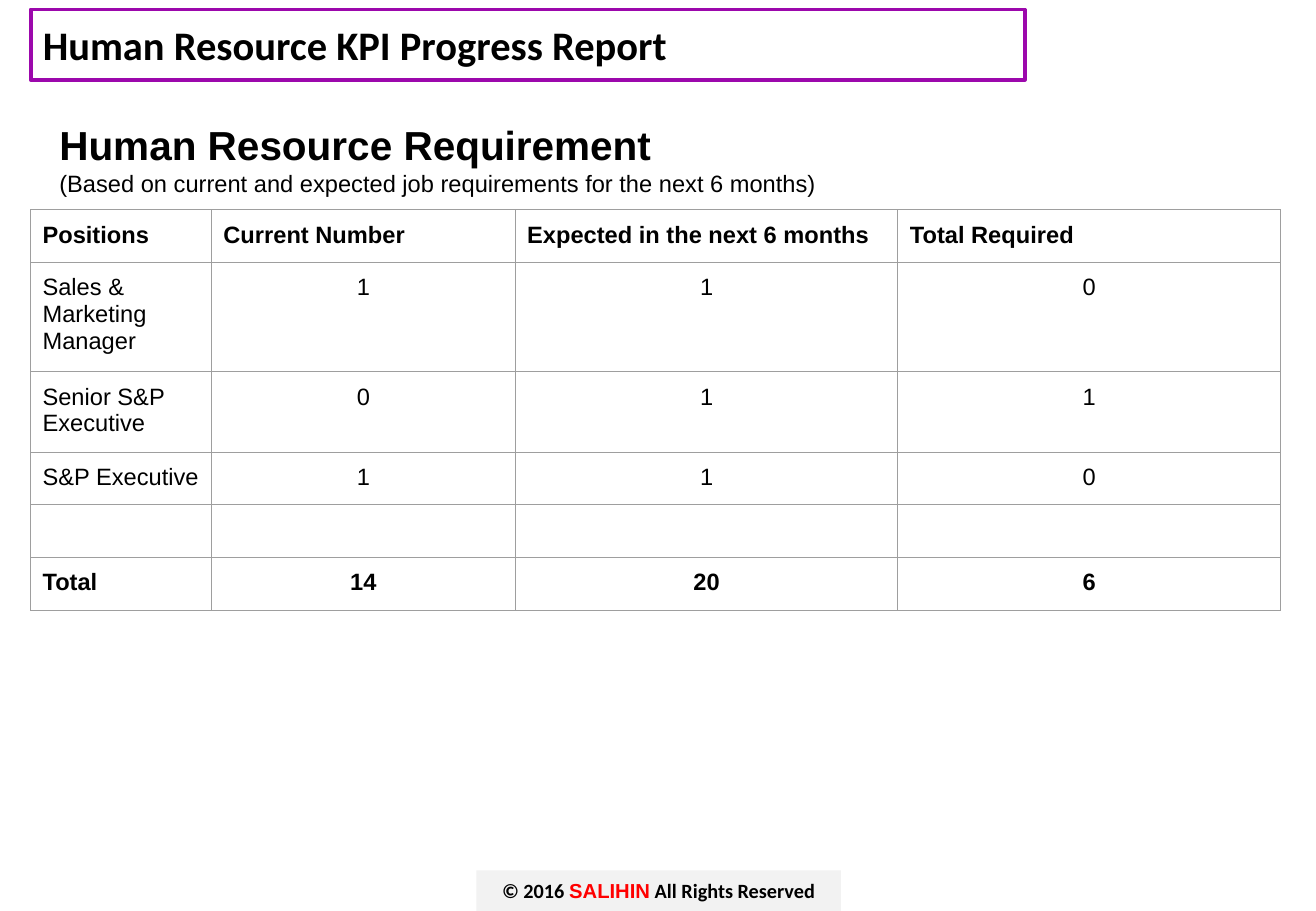
from lxml.etree import SubElement as Sub
from pptx import Presentation
from pptx.dml.color import RGBColor as Rgb
from pptx.enum.shapes import MSO_SHAPE as Shape
from pptx.enum.text import MSO_ANCHOR as Anchor, MSO_AUTO_SIZE as Auto, PP_ALIGN as Align
from pptx.oxml.ns import qn
from pptx.util import Cm, Pt

# Content
TITLE = "Human Resource KPI Progress Report"
HEADS = [
    ("Human Resource Requirement", 24, True),
    ("(Based on current and expected job requirements for the next 6 months)", 14, False),
]
ROWS = [
    ("Positions", "Current Number", "Expected in the next 6 months", "Total Required"),
    ("Sales & Marketing Manager", "1", "1", "0"),
    ("Senior S&P Executive", "0", "1", "1"),
    ("S&P Executive", "1", "1", "0"),
    ("", "", "", ""),
    ("Total", "14", "20", "6"),
]
FOOT = [
    ("© 2016 ", "Calibri", "text"),
    ("SALIHIN", "Arial", "red"),
    (" All Rights Reserved", "Calibri", "text"),
]
COLORS = {"text": "000000", "red": "FF0000", "frame": "9C08AC",
          "grid": "9E9E9E", "foot": "F2F2F2"}
WIDTHS = [3.78, 6.35, 8, 8]
HEIGHTS = [1.1, 2.18, 1.65, 1.1, 1.1, 1.1]
LEFT, PAD = 0.64, Cm(0.25)


def tint(name):
    return Rgb.from_string(COLORS[name])


def style(font, size, bold, face="Arial", color="text"):
    font.name, font.size, font.bold = face, Pt(size), bold
    font.color.rgb = tint(color)


def pad(part):
    part.margin_left = part.margin_right = PAD
    part.margin_top = part.margin_bottom = PAD


def edge(cell):
    props = cell._tc.get_or_add_tcPr()
    for side in ("lnL", "lnR", "lnT", "lnB"):
        line = Sub(props, qn("a:" + side), w=str(Pt(0.75)))
        fill = Sub(line, qn("a:solidFill"))
        Sub(fill, qn("a:srgbClr"), val=COLORS["grid"])


deck = Presentation()
deck.slide_width, deck.slide_height = Cm(27.51), Cm(19.05)
slide = deck.slides.add_slide(deck.slide_layouts[5])
shapes = slide.shapes

# Title
title = shapes.title
title.left, title.top, title.width, title.height = Cm(LEFT), Cm(0.2), Cm(20.78), Cm(1.47)
title.line.color.rgb = tint("frame")
title.line.width = Pt(2.25)
frame = title.text_frame
frame.text = TITLE
frame.auto_size = Auto.NONE
frame.vertical_anchor = Anchor.MIDDLE
para = frame.paragraphs[0]
para.alignment = Align.LEFT
style(para.font, 24, True, "Calibri")

# Heading
frame = shapes.add_textbox(Cm(0.99), Cm(2.26), Cm(24.41), Cm(1.19)).text_frame
frame.word_wrap = True
pad(frame)
for i, (text, size, bold) in enumerate(HEADS):
    para = frame.add_paragraph() if i else frame.paragraphs[0]
    para.text = text
    style(para.font, size, bold)

# Table
table = shapes.add_table(len(ROWS), len(WIDTHS), Cm(LEFT), Cm(4.39),
                         Cm(sum(WIDTHS)), Cm(sum(HEIGHTS))).table
table.first_row = table.horz_banding = False
for col, width in zip(table.columns, WIDTHS):
    col.width = Cm(width)
for r, (row, height) in enumerate(zip(ROWS, HEIGHTS)):
    table.rows[r].height = Cm(height)
    for c, text in enumerate(row):
        cell = table.cell(r, c)
        edge(cell)
        cell.fill.background()
        if text:
            pad(cell)
            cell.text = text
        para = cell.text_frame.paragraphs[0]
        para.alignment = Align.CENTER if r and c else Align.LEFT
        style(para.font, 14, r in (0, len(ROWS) - 1))

# Footer
foot = shapes.add_shape(Shape.RECTANGLE, Cm(9.96), Cm(18.2), Cm(7.62), Cm(0.85))
foot.shadow.inherit = False
foot.fill.solid()
foot.fill.fore_color.rgb = tint("foot")
foot.line.fill.background()
foot.text_frame.vertical_anchor = Anchor.MIDDLE
para = foot.text_frame.paragraphs[0]
para.alignment = Align.CENTER
for text, face, color in FOOT:
    run = para.add_run()
    run.text = text
    style(run.font, 12, True, face, color)

deck.save("out.pptx")
